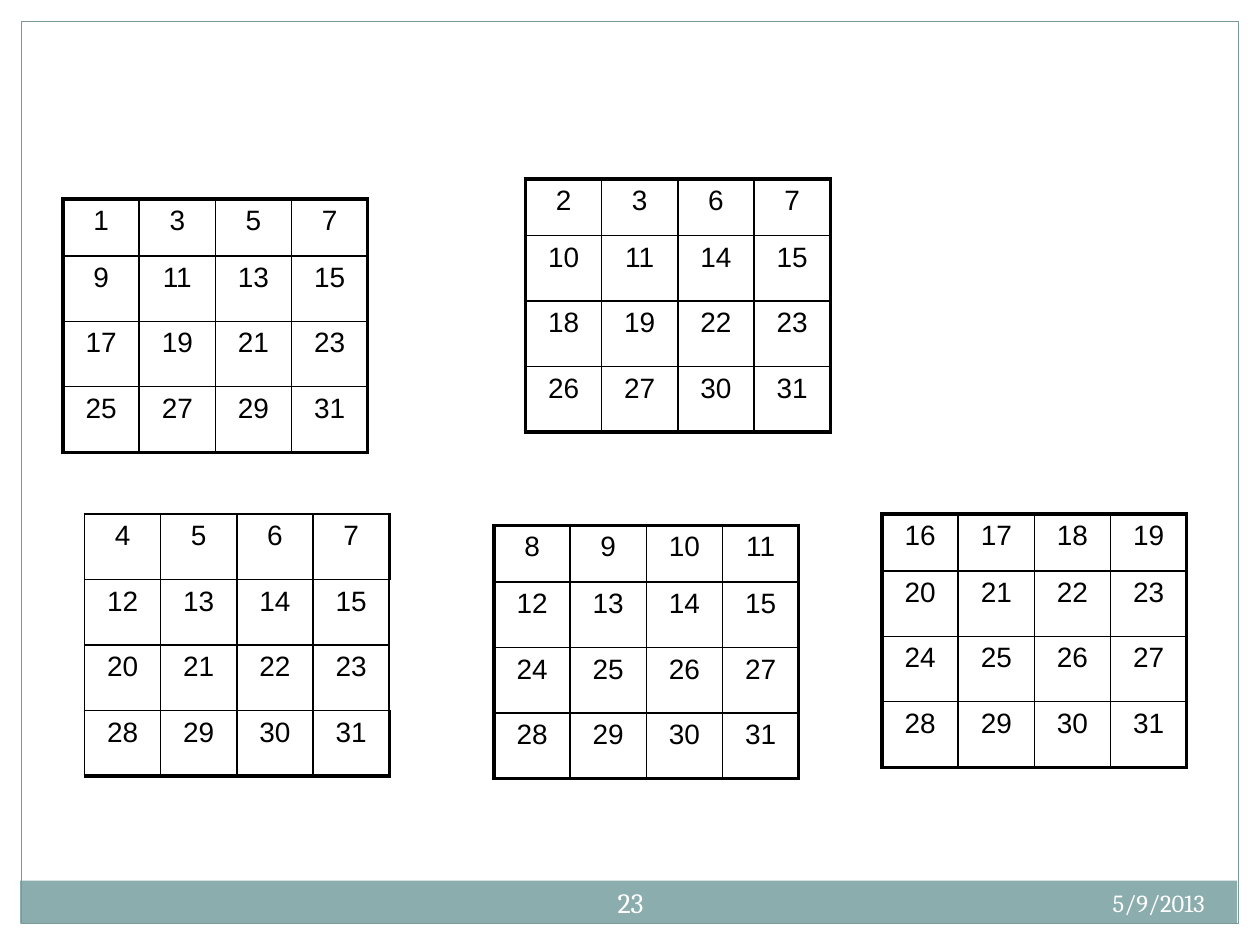
from lxml import etree
from pptx import Presentation
from pptx.dml.color import RGBColor
from pptx.enum.shapes import MSO_SHAPE
from pptx.enum.text import MSO_ANCHOR, PP_ALIGN
from pptx.oxml.ns import qn
from pptx.util import Inches, Pt

RECTANGLE = MSO_SHAPE.RECTANGLE
CENTER, RIGHT = PP_ALIGN.CENTER, PP_ALIGN.RIGHT
TOP, MIDDLE = MSO_ANCHOR.TOP, MSO_ANCHOR.MIDDLE
BLACK, WHITE = "000000", "FFFFFF"
THIN, THICK = 1, 2.25
SIZE = 4


def color(value):
    return RGBColor.from_string(value)


def write(para, text, font, size, text_color, alignment):
    para.alignment = alignment
    span = para.add_run()
    span.text = text
    span.font.name = font
    span.font.size = Pt(size)
    span.font.color.rgb = color(text_color)


deck = Presentation()
deck.slide_width, deck.slide_height = Inches(10), Inches(7.5)
page = deck.slides.add_slide(deck.slide_layouts[6])

# White margins, footer band and page frame
panels = [
    (0, 0, 10, 0.17, WHITE, None),
    (9.83, 0, 0.17, 7.5, WHITE, None),
    (0, 0, 0.17, 7.5, WHITE, None),
    (0.16, 6.99, 9.66, 0.34, "8CADAE", None),
    (0.17, 0.17, 9.66, 7.16, None, "7C999A"),
]
for left, top, width, height, fill, line in panels:
    panel = page.shapes.add_shape(
        RECTANGLE, Inches(left), Inches(top), Inches(width), Inches(height))
    panel.shadow.inherit = False
    if fill:
        panel.fill.solid()
        panel.fill.fore_color.rgb = color(fill)
    else:
        panel.fill.background()
    if line:
        panel.line.color.rgb = color(line)
        panel.line.width = Pt(0.75)
    else:
        panel.line.fill.background()

# Binary cards: each lists the numbers up to 31 that contain its bit
cards = [
    (1, 0.5, 1.58),
    (2, 4.17, 1.42),
    (16, 7, 4.08),
    (4, 0.67, 4.08),
    (8, 3.92, 4.17),
]
for bit, left, top in cards:
    numbers = [number for number in range(32) if number & bit]
    framed = bit != 4  # this card has only part of the thick frame
    heights = [0.45 if framed else 0.52] + [0.52] * (SIZE - 1)
    table = page.shapes.add_table(
        SIZE, SIZE, Inches(left), Inches(top),
        Inches(2.42), Inches(sum(heights))).table
    table.first_row = False
    table.horz_banding = False
    for row, height in zip(table.rows, heights):
        row.height = Inches(height)

    for index, number in enumerate(numbers):
        row, column = divmod(index, SIZE)
        cell = table.cell(row, column)
        write(cell.text_frame.paragraphs[0], str(number), "Arial", 16, BLACK, CENTER)

        # Cell borders
        thick_sides = {
            "L": framed and column == 0,
            "R": column == SIZE - 1 and (framed or row in (0, SIZE - 1)),
            "T": framed and row == 0,
            "B": row == SIZE - 1,
        }
        properties = cell._tc.get_or_add_tcPr()
        for side, thick in thick_sides.items():
            border = etree.SubElement(
                properties, qn("a:ln" + side), w=str(Pt(THICK if thick else THIN)))
            solid = etree.SubElement(border, qn("a:solidFill"))
            etree.SubElement(solid, qn("a:srgbClr"), val=BLACK)
        cell.fill.background()

# Date and page number
footers = [
    ("5/9/2013", 6.33, 7, 3.33, 0.4, 14, RIGHT, TOP, 0.1),
    ("23", 4.67, 6.92, 0.67, 0.48, 16, CENTER, MIDDLE, 0.05),
]
for text, left, top, width, height, size, alignment, anchor, inset in footers:
    box = page.shapes.add_textbox(
        Inches(left), Inches(top), Inches(width), Inches(height))
    frame = box.text_frame
    frame.word_wrap = True
    frame.vertical_anchor = anchor
    frame.margin_left = frame.margin_right = Inches(inset)
    write(frame.paragraphs[0], text, "Cambria", size, WHITE, alignment)

deck.save("out.pptx")
